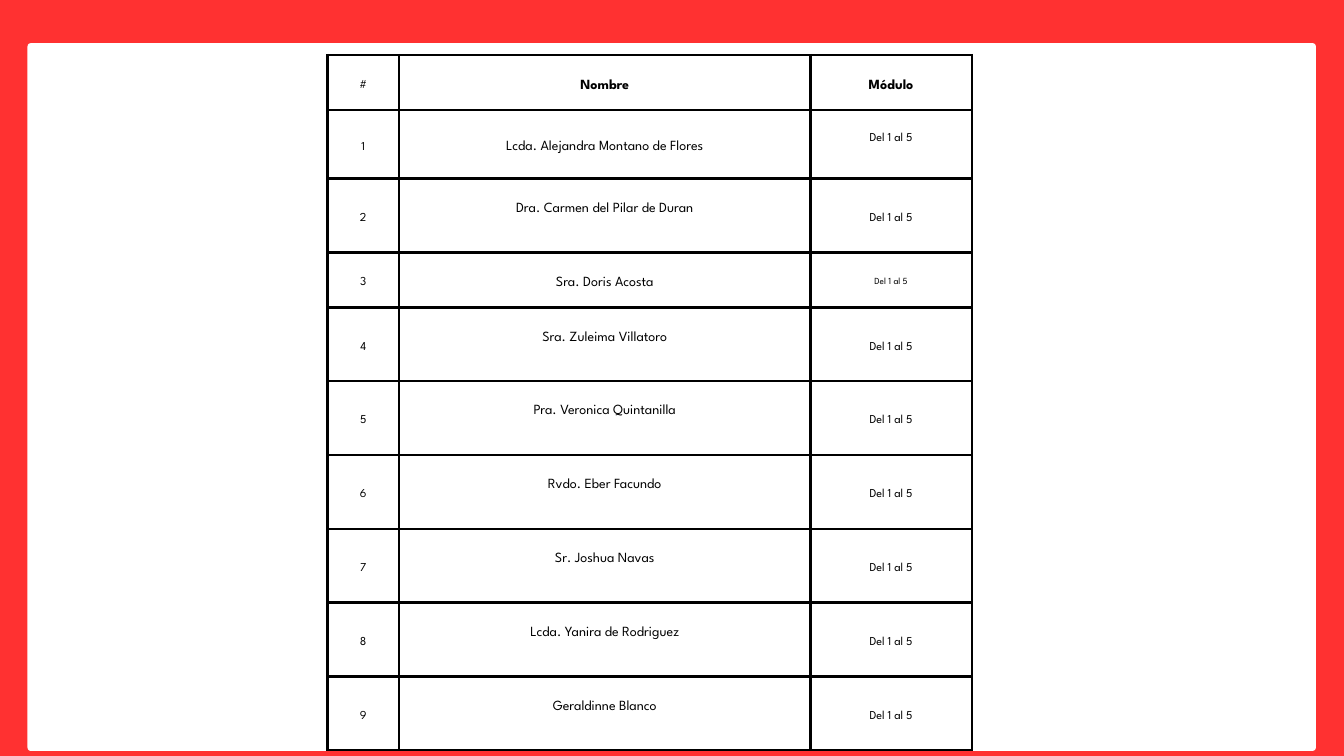
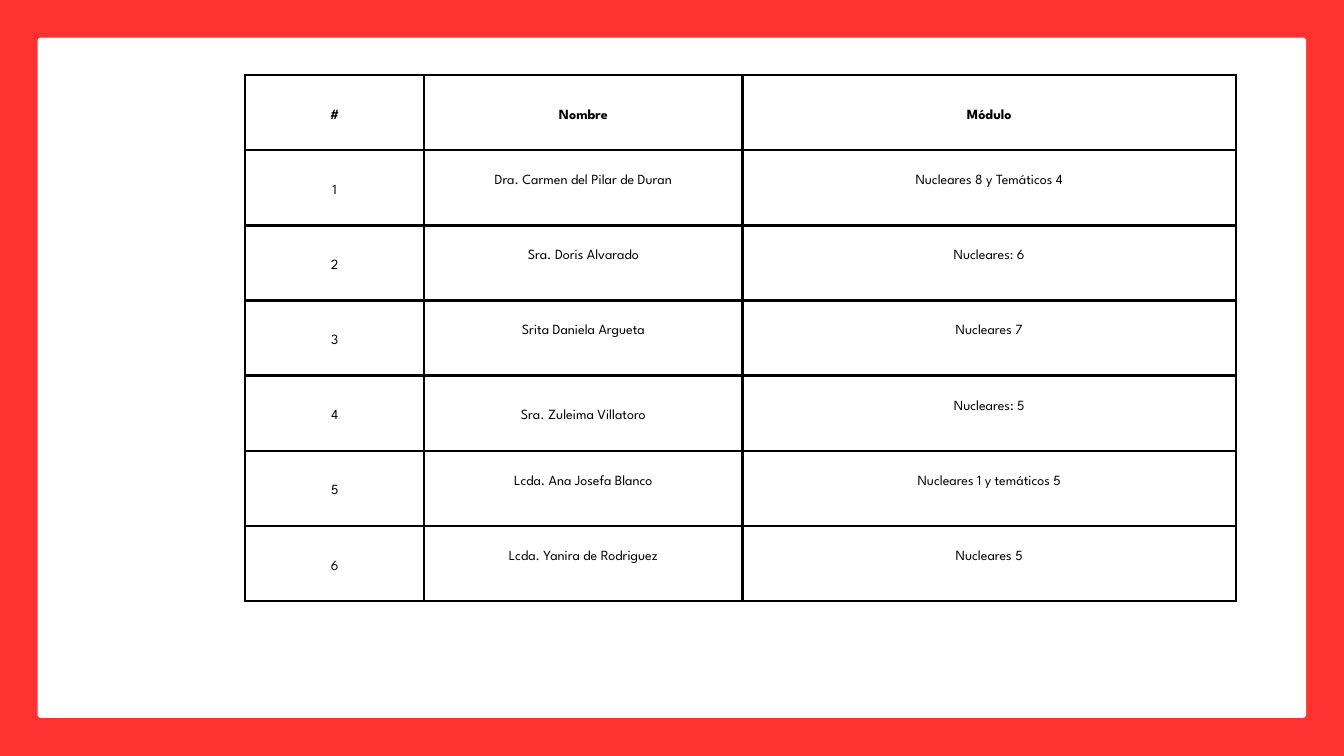
import pptx
import pptx.util
import pptx.dml.color
import pptx.enum.shapes
import pptx.enum.text
import pptx.oxml
import pptx.oxml.ns

Cm = pptx.util.Cm
Pt = pptx.util.Pt

COLORS = {"red": "FF3131", "white": "FFFFFF", "black": "000000"}
FONT = "League Spartan"
PAD = 0.53
RADIUS = 0.13
LEADING = 1.4
BORDER = 3
BODY = 15
SMALL = 13
TINY = 10
HEAD = ["#", "Nombre", "Módulo"]

STAFF = [
    "Lcda. Alejandra Montano de Flores",
    "Dra. Carmen del Pilar de Duran",
    "Sra. Doris Acosta",
    "Sra. Zuleima Villatoro",
    "Pra. Veronica Quintanilla",
    "Rvdo. Eber Facundo",
    "Sr. Joshua Navas",
    "Lcda. Yanira de Rodriguez",
    "Geraldinne Blanco",
]

TOPICS = [
    ("Dra. Carmen del Pilar de Duran", "Nucleares 8 y Temáticos 4"),
    ("Sra. Doris Alvarado", "Nucleares: 6"),
    ("Srita Daniela Argueta", "Nucleares 7"),
    ("Sra. Zuleima Villatoro", "Nucleares: 5"),
    ("Lcda. Ana Josefa Blanco", "Nucleares 1 y temáticos 5"),
    ("Lcda. Yanira de Rodriguez", "Nucleares 5"),
]


def color(name):
    return pptx.dml.color.RGBColor.from_string(COLORS[name])


def add_panel(slide, box):
    left, top, width, height = box
    panel = slide.shapes.add_shape(
        pptx.enum.shapes.MSO_SHAPE.ROUNDED_RECTANGLE,
        Cm(left), Cm(top), Cm(width), Cm(height))
    panel.adjustments[0] = RADIUS / min(width, height)
    panel.shadow.inherit = False
    panel.fill.solid()
    panel.fill.fore_color.rgb = color("white")
    panel.line.fill.background()


def add_page(deck, box):
    slide = deck.slides.add_slide(deck.slide_layouts[6])
    slide.background.fill.solid()
    slide.background.fill.fore_color.rgb = color("red")
    add_panel(slide, box)
    return slide


def set_border(cell):
    props = cell._tc.get_or_add_tcPr()
    for index, side in enumerate(("lnL", "lnR", "lnT", "lnB")):
        line = pptx.oxml.parse_xml(
            f'<a:{side} {pptx.oxml.ns.nsdecls("a")} w="{Pt(BORDER)}">'
            f'<a:solidFill><a:srgbClr val="{COLORS["black"]}"/></a:solidFill>'
            f'<a:prstDash val="solid"/></a:{side}>')
        props.insert(index, line)


def fill_cell(cell, text, size, bold, raised):
    cell.fill.background()
    set_border(cell)
    cell.vertical_anchor = pptx.enum.text.MSO_ANCHOR.MIDDLE
    cell.margin_left = cell.margin_right = Cm(PAD)
    cell.margin_top = cell.margin_bottom = Cm(PAD)
    if raised:
        cell.margin_bottom = Cm(PAD) + Pt(size * LEADING)
    cell.text_frame.text = text
    para = cell.text_frame.paragraphs[0]
    para.alignment = pptx.enum.text.PP_ALIGN.CENTER
    para.line_spacing = Pt(size * LEADING)
    font = para.runs[0].font
    font.name = FONT
    font.size = Pt(size)
    font.bold = bold
    font.color.rgb = color("black")


def add_grid(slide, left, top, widths, heights, rows, style):
    frame = slide.shapes.add_table(
        len(rows), len(widths), Cm(left), Cm(top),
        Cm(sum(widths)), Cm(sum(heights)))
    table = frame.table
    table.first_row = False
    table.horz_banding = False
    for column, width in zip(table.columns, widths):
        column.width = Cm(width)
    for row, height in zip(table.rows, heights):
        row.height = Cm(height)
    for r, texts in enumerate(rows):
        for c, text in enumerate(texts):
            fill_cell(table.cell(r, c), text, *style(r, c))


def staff_style(row, col):
    if (row, col) == (3, 2):
        size = TINY
    elif col == 1 or (row, col) == (0, 2):
        size = BODY
    else:
        size = SMALL
    bold = row == 0 and col > 0
    raised = (row, col) == (1, 2) or (col == 1 and row not in (0, 1, 3))
    return size, bold, raised


def topic_style(row, col):
    raised = row > 0 and col > 0 and (row, col) != (4, 1)
    return BODY, row == 0, raised


def add_staff(deck):
    left, top = 1.04, 1.63
    slide = add_page(deck, (left, top, 48.7, 26.76))
    rows = [HEAD] + [
        (str(n), name, "Del 1 al 5") for n, name in enumerate(STAFF, 1)]
    heights = [2.08, 2.59, 2.79, 2.08] + [2.79] * 6
    add_grid(slide, left + 11.33, top + 0.45, [2.72, 15.54, 6.1],
             heights, rows, staff_style)


def add_topics(deck):
    left, top = 1.42, 1.42
    slide = add_page(deck, (left, top, 47.95, 25.72))
    rows = [HEAD] + [(str(n), *pair) for n, pair in enumerate(TOPICS, 1)]
    add_grid(slide, left + 7.85, top + 1.42, [6.76, 12.04, 18.64],
             [2.84] * len(rows), rows, topic_style)


def main():
    deck = pptx.Presentation()
    deck.slide_width = Cm(50.8)
    deck.slide_height = Cm(28.58)
    add_staff(deck)
    add_topics(deck)
    deck.save("out.pptx")


if __name__ == "__main__":
    main()
